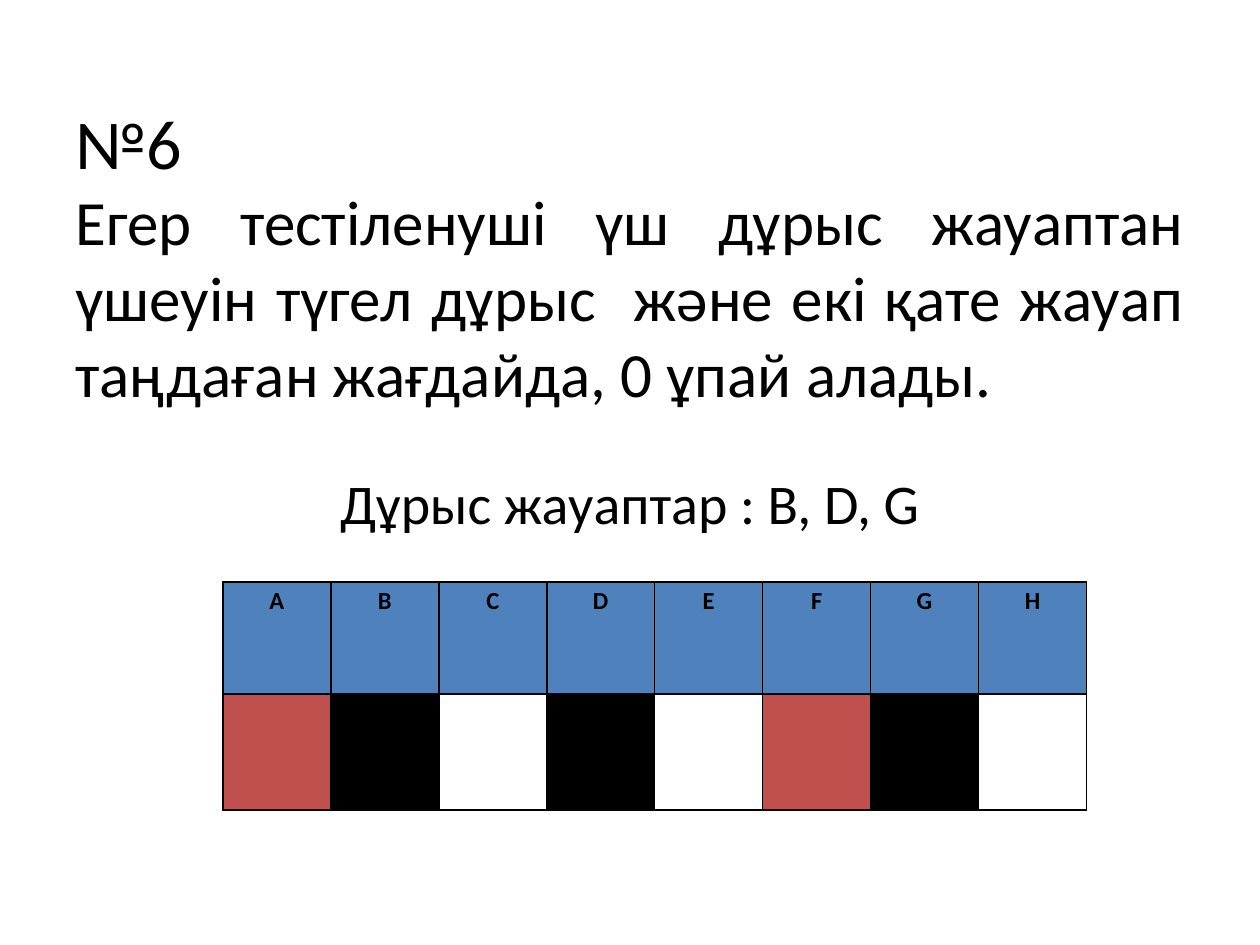
from lxml.etree import SubElement
from pptx import Presentation
from pptx.dml.color import RGBColor
from pptx.enum.text import MSO_ANCHOR as ANCHOR, PP_ALIGN as ALIGN
from pptx.oxml.ns import qn
from pptx.util import Pt

# Content
NUMBER = "№6"
RULE = ("Егер тестіленуші үш дұрыс жауаптан үшеуін түгел дұрыс  және "
        "екі қате жауап таңдаған жағдайда, 0 ұпай алады.")
ANSWERS = "Дұрыс жауаптар : B, D, G"
OPTIONS = "ABCDEFGH"
CORRECT, WRONG = "BDG", "AF"  # options the candidate marked

BLACK, BLUE, RED = "000000", "4F81BD", "C0504D"
COL_WIDTH, ROW_HEIGHTS = 61.7, (64, 66.3)


def rgb(value):
    return RGBColor.from_string(value)


def style(font, size, bold=False):
    font.name, font.size, font.bold = "Calibri", Pt(size), bold
    font.color.rgb = rgb(BLACK)


def add_text(slide, box, align, anchor):
    tf = slide.shapes.add_textbox(*map(Pt, box)).text_frame
    tf.word_wrap = True
    tf.vertical_anchor = anchor
    p = tf.paragraphs[0]
    p.alignment = align
    return p


def format_cell(cell, fill):
    cell.margin_left = cell.margin_right = Pt(5)
    cell.margin_top = cell.margin_bottom = 0
    pr = cell._tc.get_or_add_tcPr()
    for side in ("a:lnL", "a:lnR", "a:lnT", "a:lnB"):
        ln = SubElement(pr, qn(side), w=str(Pt(1)))
        SubElement(SubElement(ln, qn("a:solidFill")), qn("a:srgbClr"), val=BLACK)
    if fill:
        cell.fill.solid()
        cell.fill.fore_color.rgb = rgb(fill)
    else:
        cell.fill.background()


prs = Presentation()
prs.slide_width, prs.slide_height = Pt(720), Pt(540)
slide = prs.slides.add_slide(prs.slide_layouts[6])

# Question number and scoring rule
p = add_text(slide, (36, 26.6, 648, 237.6), ALIGN.JUSTIFY, ANCHOR.MIDDLE)
r = p.add_run()
r.text = NUMBER
style(r.font, 40)
p.add_line_break()
r = p.add_run()
r.text = RULE
style(r.font, 36)

# Correct answers
p = add_text(slide, (68.4, 264.2, 583.2, 218.2), ALIGN.CENTER, ANCHOR.TOP)
p.text = ANSWERS
p.space_before = Pt(6.4)
style(p.font, 32)

# Answer sheet
table = slide.shapes.add_table(
    2, len(OPTIONS), Pt(127.4), Pt(332.6),
    Pt(COL_WIDTH * len(OPTIONS)), Pt(sum(ROW_HEIGHTS))).table
table.first_row = table.horz_banding = False
for row, height in zip(table.rows, ROW_HEIGHTS):
    row.height = Pt(height)
for i, option in enumerate(OPTIONS):
    table.columns[i].width = Pt(COL_WIDTH)
    head, mark = table.cell(0, i), table.cell(1, i)
    format_cell(head, BLUE)
    format_cell(mark, BLACK if option in CORRECT else RED if option in WRONG else None)
    p = head.text_frame.paragraphs[0]
    p.text = option
    p.alignment = ALIGN.CENTER
    p.line_spacing = 1.15
    style(p.font, 14, bold=True)

prs.save("out.pptx")
